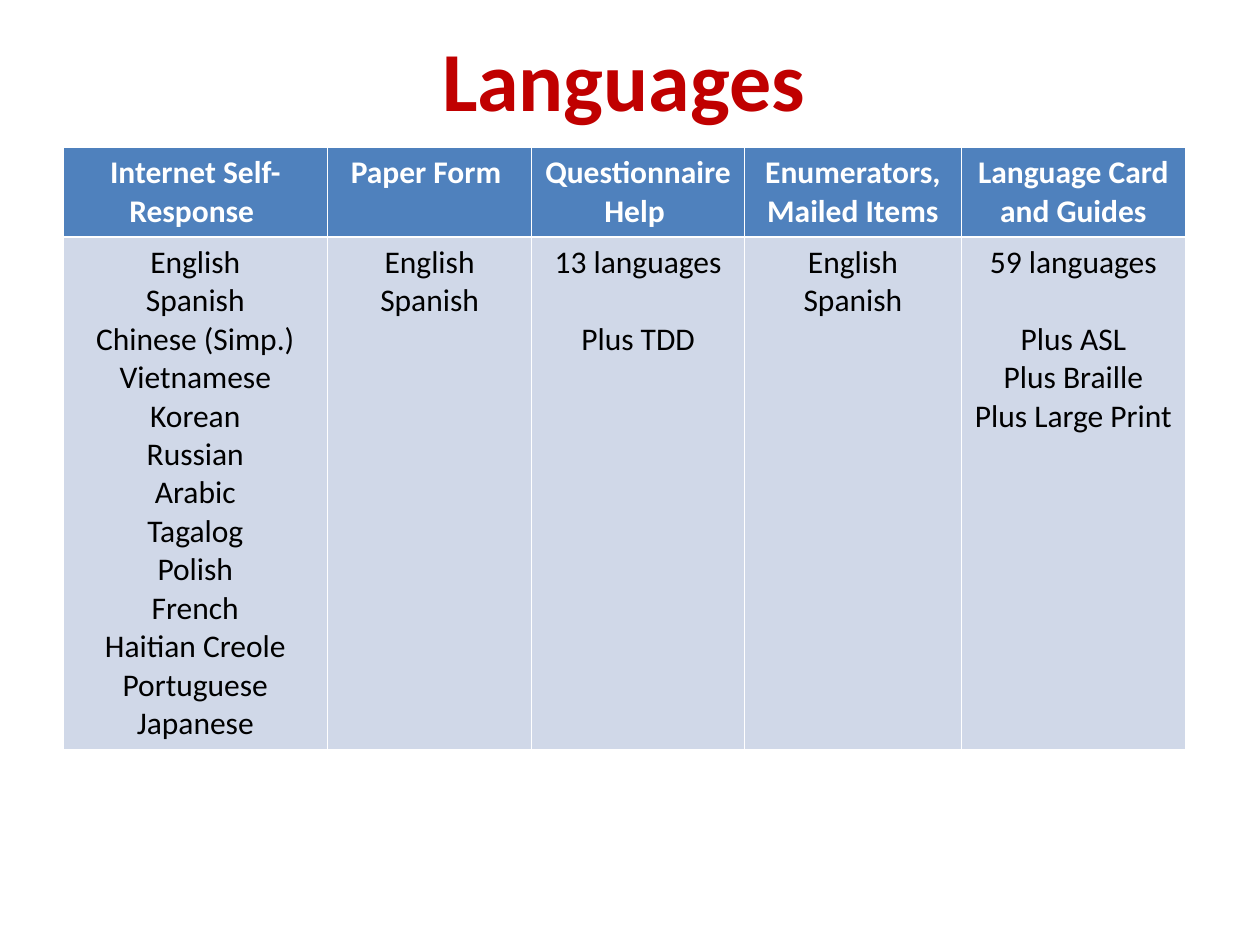
from pptx import Presentation
from pptx.dml.color import RGBColor
from pptx.enum.text import MSO_ANCHOR, PP_ALIGN
from pptx.util import Inches, Pt

RED = RGBColor(0xC0, 0x00, 0x00)
WHITE = RGBColor(0xFF, 0xFF, 0xFF)
BLACK = RGBColor(0x00, 0x00, 0x00)
HEADER_BLUE = RGBColor(0x4F, 0x81, 0xBD)
BODY_BLUE = RGBColor(0xD0, 0xD8, 0xE8)
FONT = "Calibri"
LINE_GAP = Pt(22)

# Each column: width in inches, heading, groups of lines.
# "\v" is a line break inside a paragraph; groups are one line apart.
COLUMNS = [
    (2.1, "Internet Self-Response ", [[
        "English", "Spanish\vChinese (Simp.)", "Vietnamese", "Korean",
        "Russian", "Arabic", "Tagalog", "Polish", "French",
        "Haitian Creole", "Portuguese", "Japanese"]]),
    (1.62, "Paper Form ", [["English", "Spanish"]]),
    (1.69, "Questionnaire\vHelp ", [["13 languages"], ["Plus TDD"]]),
    (1.72, "Enumerators,\vMailed Items", [["English", "Spanish"]]),
    (1.78, "Language Card and Guides",
     [["59 languages"], ["Plus ASL", "Plus Braille", "Plus Large Print"]]),
]
ROW_HEIGHTS = (0.7, 4.06)


def fill_cell(cell, groups, fill_color, text_color, bold):
    cell.fill.solid()
    cell.fill.fore_color.rgb = fill_color
    cell.text = "\n".join(line for group in groups for line in group)
    group_starts = {sum(map(len, groups[:i])) for i in range(1, len(groups))}
    for index, paragraph in enumerate(cell.text_frame.paragraphs):
        paragraph.alignment = PP_ALIGN.CENTER
        if index in group_starts:
            paragraph.space_before = LINE_GAP
        paragraph.font.name = FONT
        paragraph.font.size = Pt(18)
        paragraph.font.bold = bold
        paragraph.font.color.rgb = text_color


presentation = Presentation()
presentation.slide_width = Inches(10)
presentation.slide_height = Inches(7.5)
slide = presentation.slides.add_slide(presentation.slide_layouts[5])

title = slide.shapes.title
title.left, title.top = Inches(0.5), Inches(0.08)
title.width, title.height = Inches(9), Inches(1.08)
title.text_frame.vertical_anchor = MSO_ANCHOR.MIDDLE
paragraph = title.text_frame.paragraphs[0]
paragraph.alignment = PP_ALIGN.CENTER
for text, size in (("Languages", 48), (" ", 32)):
    run = paragraph.add_run()
    run.text = text
    run.font.name = FONT
    run.font.size = Pt(size)
    run.font.bold = True
    run.font.color.rgb = RED

total_width = sum(width for width, _, _ in COLUMNS)
table = slide.shapes.add_table(
    len(ROW_HEIGHTS), len(COLUMNS), Inches(0.5), Inches(1.17),
    Inches(total_width), Inches(sum(ROW_HEIGHTS))).table
for row, height in zip(table.rows, ROW_HEIGHTS):
    row.height = Inches(height)
for index, (width, heading, groups) in enumerate(COLUMNS):
    table.columns[index].width = Inches(width)
    fill_cell(table.cell(0, index), [[heading]], HEADER_BLUE, WHITE, True)
    fill_cell(table.cell(1, index), groups, BODY_BLUE, BLACK, False)

presentation.save("out.pptx")
